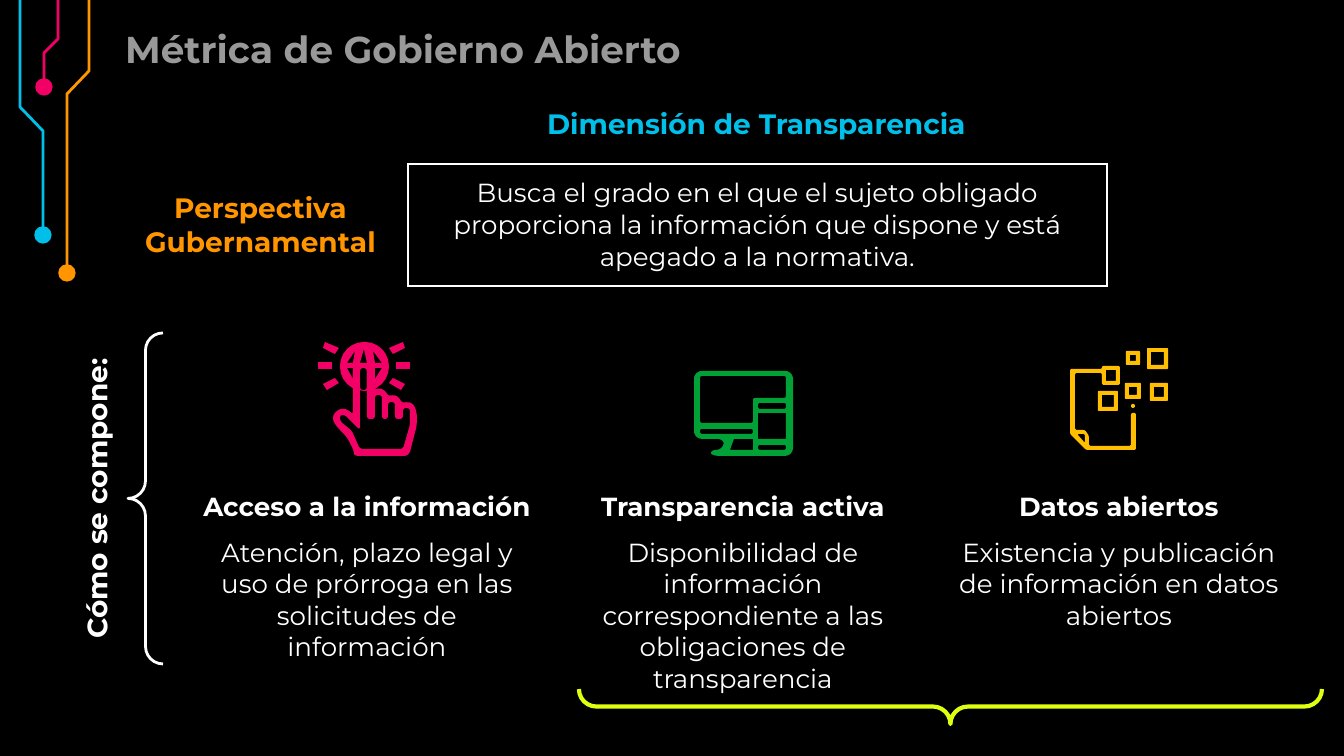
import math
import pptx
import pptx.util
import pptx.dml.color
import pptx.enum.shapes
import pptx.enum.text
import pptx.oxml
import pptx.oxml.ns

PX = 914400 / 134.4
FONT = "Montserrat"
COLORS = {"black": "000000", "white": "FFFFFF", "gray": "999999", "cyan": "00BFE9",
          "pink": "F20066", "orange": "FF9600", "green": "00A137", "amber": "FFBE00",
          "lime": "DFFF10"}

# Content: text, box (left, top, width, height), size, color, bold, centred, rotation
HEADINGS = [
    ("Métrica de Gobierno Abierto", (112, 13, 761, 67), 20, "gray", False, 0),
    ("Dimensión de Transparencia", (407, 93, 699, 52), 15, "cyan", True, 0),
    ("Perspectiva Gubernamental", (129, 177, 263, 52), 15, "orange", True, 0),
    ("Cómo se compone:", (-58, 466, 313, 65), 15, "white", True, 270),
]
DEFINITION = ("Busca el grado en el que el sujeto obligado proporciona la información "
              "que dispone y está apegado a la normativa.")
COMPONENTS = [
    ("Acceso a la información",
     "Atención, plazo legal y uso de prórroga en las solicitudes de información"),
    ("Transparencia activa",
     "Disponibilidad de información correspondiente a las obligaciones de transparencia"),
    ("Datos abiertos", "Existencia y publicación de información en datos abiertos"),
]
TRACES = [
    ("cyan", [(20, 0), (20, 107), (43, 131), (43, 235)]),
    ("pink", [(58, 0), (58, 39), (44, 53), (44, 87)]),
    ("orange", [(89, 0), (89, 71), (67, 94), (67, 273)]),
]
BRACES = [((128, 333, 35, 331), 0, "white", 1.5), ((933, 335, 35, 743), 270, "lime", 2.25)]


def box(left, top, right, bottom):
    return [(left, top), (right, top), (right, bottom), (left, bottom)]


# Icon outlines: each icon part is a list of (corner radius, points); inner ones are holes
GLOBE = [
    (24, box(340, 342, 389, 391)),
    (0, [(355, 351), (353, 363), (347, 363)]),
    (0, [(364, 349), (367, 363), (360, 363)]),
    (0, [(373, 351), (382, 363), (375, 363)]),
    (0, [(347, 368), (353, 368), (353, 379)]),
    (0, [(375, 368), (382, 368), (375, 379)]),
    (3, box(360, 368, 367, 390)),
]
HAND = [
    (5, [(353, 366), (353, 415), (350, 411), (343, 408), (336, 411), (332, 418),
         (336, 426), (347, 437), (354, 451), (354, 456), (409, 456), (417, 425),
         (417, 412), (413, 403), (406, 402), (402, 403), (398, 396), (392, 395),
         (388, 396), (385, 390), (378, 388), (375, 390), (375, 366)]),
    (3, [(360, 368), (367, 368), (367, 419), (375, 419), (375, 395), (382, 395),
         (382, 419), (388, 419), (388, 402), (395, 402), (395, 419), (403, 419),
         (403, 408), (410, 408), (410, 425), (403, 449), (360, 449), (352, 431),
         (340, 421), (340, 415), (345, 415), (360, 430)]),
]
LEFT_RAYS = [
    box(318, 362, 332, 369),
    [(335, 378), (323, 384), (327, 390), (339, 383)],
    [(325, 342), (323, 348), (335, 354), (339, 348)],
]
RIGHT_RAYS = [[(728 - x, y) for x, y in ray] for ray in LEFT_RAYS]
DEVICES = [
    (8, [(694, 371), (793, 371), (793, 456), (711, 456), (711, 450), (722, 450),
         (725, 439), (694, 439)]),
    (2, [(700, 376), (786, 376), (786, 398), (753, 398), (753, 423), (700, 423)]),
    (2, box(700, 429, 753, 434)),
    (0, [(734, 439), (753, 439), (753, 450), (730, 450)]),
    (2, box(758, 403, 786, 409)),
    (0, box(758, 413, 786, 439)),
    (2, box(758, 445, 786, 450)),
]
DOCUMENT = [
    (2, [(1070, 369), (1102, 369), (1102, 366), (1120, 366), (1120, 385), (1102, 385),
         (1102, 373), (1075, 373), (1075, 430), (1085, 430), (1089, 436), (1089, 446),
         (1131, 446), (1131, 413), (1136, 413), (1136, 450), (1086, 450), (1070, 434)]),
    (0, box(1106, 370, 1116, 381)),
    (2, [(1077, 434), (1085, 434), (1085, 443)]),
]
DATA_SQUARES = [(1147, 348, 21), (1126, 351, 14), (1098, 391, 20),
                (1150, 383, 18), (1125, 383, 16)]
ICON_PARTS = (
    [("pink", GLOBE), ("pink", HAND)]
    + [("pink", [(0, ray)]) for ray in LEFT_RAYS + RIGHT_RAYS]
    + [("green", DEVICES), ("amber", DOCUMENT), ("amber", [(2, box(1131, 404, 1135, 408))])]
    + [("amber", [(1, box(x, y, x + side, y + side)),
                  (0, box(x + 4, y + 4, x + side - 4, y + side - 4))])
       for x, y, side in DATA_SQUARES])


def rgb(name):
    return pptx.dml.color.RGBColor.from_string(COLORS[name])


def emu(*lengths):
    return [round(length * PX) for length in lengths]


def rounded(points, radius):
    """Replace each corner by a short sampled curve."""
    if not radius:
        return points
    result = []
    for i, corner in enumerate(points):
        ends = []
        for other in (points[i - 1], points[(i + 1) % len(points)]):
            length = math.dist(corner, other)
            share = min(radius, length / 2) / length
            ends.append([c + (o - c) * share for c, o in zip(corner, other)])
        for step in range(7):
            t = step / 6
            weights = ((1 - t) ** 3 + 1.35 * t * (1 - t) ** 2,
                       t ** 3 + 1.35 * t ** 2 * (1 - t))
            middle = 1 - sum(weights)
            result.append(tuple(weights[0] * a + middle * c + weights[1] * b
                                for a, c, b in zip(ends[0], corner, ends[1])))
    return result


def add_outline(slide, contours, close):
    builder = None
    for points in contours:
        points = [emu(*point) for point in points]
        if builder is None:
            builder = slide.shapes.build_freeform(*points[0])
        else:
            builder.move_to(*points[0])
        builder.add_line_segments(points[1:], close=close)
    shape = builder.convert_to_shape()
    shape.shadow.inherit = False
    return shape


def style_line(shape, color, width):
    shape.fill.background()
    shape.line.color.rgb = rgb(color)
    shape.line.width = pptx.util.Pt(width)


def write(frame, text, size, color, bold, centred=True):
    frame.word_wrap = True
    frame.margin_left = frame.margin_right = pptx.util.Inches(0.1)
    frame.margin_top = frame.margin_bottom = pptx.util.Inches(0.1)
    paragraph = frame.paragraphs[0]
    paragraph.text = text
    align = pptx.enum.text.PP_ALIGN
    paragraph.alignment = align.CENTER if centred else align.LEFT
    paragraph.font.name = FONT
    paragraph.font.size = pptx.util.Pt(size)
    paragraph.font.bold = bold
    paragraph.font.color.rgb = rgb(color)


def add_text(slide, text, place, size, color, bold, centred=True, rotation=0):
    shape = slide.shapes.add_textbox(*emu(*place))
    shape.rotation = rotation
    write(shape.text_frame, text, size, color, bold, centred)


def add_definition(slide):
    table = slide.shapes.add_table(1, 1, *emu(408, 164, 699, 122)).table
    table.first_row = table.horz_banding = False
    cell = table.cell(0, 0)
    cell.fill.background()
    cell.vertical_anchor = pptx.enum.text.MSO_ANCHOR.MIDDLE
    cell.margin_left = cell.margin_right = pptx.util.Inches(0.1)
    cell.margin_top = cell.margin_bottom = pptx.util.Inches(0.1)
    write(cell.text_frame, DEFINITION, 14, "white", False)
    properties = cell._tc.get_or_add_tcPr()
    for index, side in enumerate(("lnL", "lnR", "lnT", "lnB")):
        properties.insert(index, pptx.oxml.parse_xml(
            f'<a:{side} {pptx.oxml.ns.nsdecls("a")} w="19050"><a:solidFill>'
            f'<a:srgbClr val="{COLORS["white"]}"/></a:solidFill></a:{side}>'))


def main():
    presentation = pptx.Presentation()
    presentation.slide_width, presentation.slide_height = emu(1344, 756)
    slide = presentation.slides.add_slide(presentation.slide_layouts[6])
    slide.background.fill.solid()
    slide.background.fill.fore_color.rgb = rgb("black")
    kinds = pptx.enum.shapes.MSO_SHAPE

    # Circuit traces, each ending in a dot
    for color, points in TRACES:
        style_line(add_outline(slide, [points], False), color, 1.5)
        x, y = points[-1]
        dot = slide.shapes.add_shape(kinds.OVAL, *emu(x - 8, y - 8, 16, 16))
        dot.shadow.inherit = False
        style_line(dot, color, 0.75)
        dot.fill.solid()
        dot.fill.fore_color.rgb = rgb(color)

    # Headings and definition
    for text, place, size, color, centred, rotation in HEADINGS:
        add_text(slide, text, place, size, color, True, centred, rotation)
    add_definition(slide)

    # Three component columns
    for column, (name, description) in enumerate(COMPONENTS):
        left = 187 + 376 * column
        add_text(slide, name, (left, 477, 360, 67), 14, "white", True)
        add_text(slide, description, (left, 523, 360, 137), 14, "white", False)

    # Icons
    for color, contours in ICON_PARTS:
        icon = add_outline(slide, [rounded(points, radius) for radius, points in contours], True)
        icon.fill.solid()
        icon.fill.fore_color.rgb = rgb(color)
        icon.line.fill.background()

    # Braces
    for place, rotation, color, width in BRACES:
        brace = slide.shapes.add_shape(kinds.LEFT_BRACE, *emu(*place))
        brace.shadow.inherit = False
        brace.adjustments[0] = 0.5
        brace.rotation = rotation
        style_line(brace, color, width)

    presentation.save("out.pptx")


if __name__ == "__main__":
    main()
